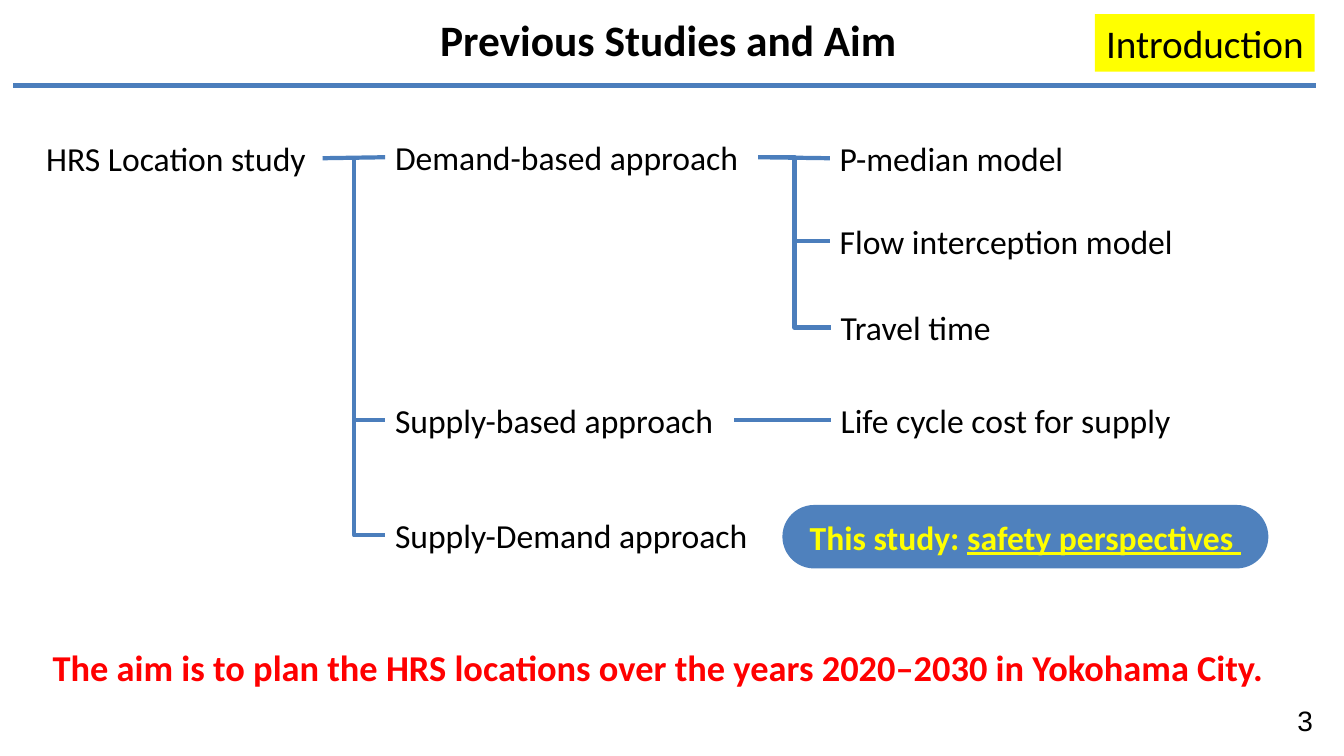
"""Builds a slide that shows previous studies as a tree, with the aim below."""
from lxml import etree
from pptx import Presentation
from pptx.dml.color import RGBColor
from pptx.enum.shapes import MSO_CONNECTOR, MSO_SHAPE
from pptx.enum.text import MSO_ANCHOR, MSO_AUTO_SIZE, PP_ALIGN
from pptx.oxml.ns import qn
from pptx.util import Emu, Pt

PX = 9144
COLORS = {"text": "000000", "line": "4B7EBC", "study": "4F81BD",
          "highlight": "FFFF00", "aim": "FF0000"}
LEFT, CENTER, RIGHT = PP_ALIGN.LEFT, PP_ALIGN.CENTER, PP_ALIGN.RIGHT
TOP, MIDDLE = MSO_ANCHOR.TOP, MSO_ANCHOR.MIDDLE
STRAIGHT, ELBOW = MSO_CONNECTOR.STRAIGHT, MSO_CONNECTOR.ELBOW
RECTANGLE, ROUNDED = MSO_SHAPE.RECTANGLE, MSO_SHAPE.ROUNDED_RECTANGLE
NO_AUTOFIT = MSO_AUTO_SIZE.NONE

LABEL_HEIGHT = 50
APPROACH_X, MODEL_X = 382, 823
APPROACHES = [("Demand-based approach", 131, 370),
              ("Supply-based approach", 392, 346),
              ("Supply-Demand approach", 506, 386)]
MODELS = [("P-median model", 823, 132), ("Flow interception model", 823, 214),
          ("Travel time", 824, 300), ("Life cycle cost for supply", 824, 392)]
BRANCHES = [(ELBOW, 320, 157, 382, 417), (ELBOW, 320, 157, 382, 531),
            (STRAIGHT, 320, 157, 382, 156), (STRAIGHT, 823, 157, 752, 156),
            (ELBOW, 752, 156, 823, 239), (ELBOW, 752, 156, 824, 325),
            (STRAIGHT, 824, 417, 728, 417)]


def emu(*lengths):
    """Turn px lengths into EMU."""
    return [Emu(length * PX) for length in lengths]


def color(name):
    """Look up a colour by name."""
    return RGBColor.from_string(COLORS[name])


def write(shape, text, size, ink="text", bold=False, align=LEFT,
          anchor=TOP, font="Calibri"):
    """Put one formatted paragraph into a shape and return it."""
    frame = shape.text_frame
    frame.text = text
    frame.word_wrap = True
    frame.auto_size = NO_AUTOFIT
    frame.vertical_anchor = anchor
    if align == CENTER:
        frame.margin_left = frame.margin_right = 0
    para = frame.paragraphs[0]
    para.alignment = align
    for span in para.runs:
        format_span(span, size, ink, bold, font)
    return para


def format_span(span, size, ink, bold, font="Calibri"):
    """Set the font of a run."""
    span.font.name = font
    span.font.size = Pt(size)
    span.font.bold = bold
    span.font.color.rgb = color(ink)


def add_label(page, box, text, size=24, **style):
    """Add a text box."""
    return write(page.shapes.add_textbox(*emu(*box)), text, size, **style)


def add_panel(page, preset, box, fill):
    """Add a filled shape without outline."""
    panel = page.shapes.add_shape(preset, *emu(*box))
    panel.shadow.inherit = False
    panel.fill.solid()
    panel.fill.fore_color.rgb = color(fill)
    panel.line.fill.background()
    return panel


def add_line(page, kind, ends, width=3):
    """Add a connector without shadow."""
    line = page.shapes.add_connector(kind, *emu(*ends))
    line.line.color.rgb = color("line")
    line.line.width = Pt(width)
    etree.SubElement(line._element.spPr, qn("a:effectLst"))


def add_title(page, box, text):
    """Place and format the title placeholder."""
    title = page.shapes.title
    title.left, title.top, title.width, title.height = emu(*box)
    write(title, text, 31, bold=True, align=CENTER)


def add_study(page):
    """Add the rounded panel that names this study."""
    panel = add_panel(page, ROUNDED, (776, 501, 482, 63), "study")
    panel.adjustments[0] = 0.5
    para = write(panel, "This study: ", 24, "highlight", True, CENTER, MIDDLE)
    span = para.add_run()
    span.text = "safety perspectives "
    format_span(span, 24, "highlight", True)
    span.font.underline = True


def main():
    """Build and save the deck."""
    deck = Presentation()
    deck.slide_width, deck.slide_height = emu(1333, 750)
    page = deck.slides.add_slide(deck.slide_layouts[5])
    add_title(page, (167, 8, 1001, 62), "Previous Studies and Aim ")
    add_label(page, (1001, 695, 311, 40), "3", 20, align=RIGHT,
              anchor=MIDDLE, font="Arial")
    add_line(page, STRAIGHT, (13, 85, 1305, 85), 3.5)
    section = add_panel(page, RECTANGLE, (1086, 14, 218, 57), "highlight")
    write(section, "Introduction", 28, align=CENTER)
    add_label(page, (29, 132, 291, LABEL_HEIGHT), "HRS Location study", align=CENTER)
    for text, top, width in APPROACHES:
        add_label(page, (APPROACH_X, top, width, LABEL_HEIGHT), text)
    for text, left, top in MODELS:
        add_label(page, (left, top, 386, LABEL_HEIGHT), text)
    for kind, *ends in BRANCHES:
        add_line(page, kind, ends)
    add_study(page)
    add_label(page, (41, 635, 1225, 54),
              "The aim is to plan the HRS locations over the years "
              "2020–2030 in Yokohama City.",
              26, ink="aim", bold=True, align=CENTER)
    deck.save("out.pptx")


if __name__ == "__main__":
    main()
